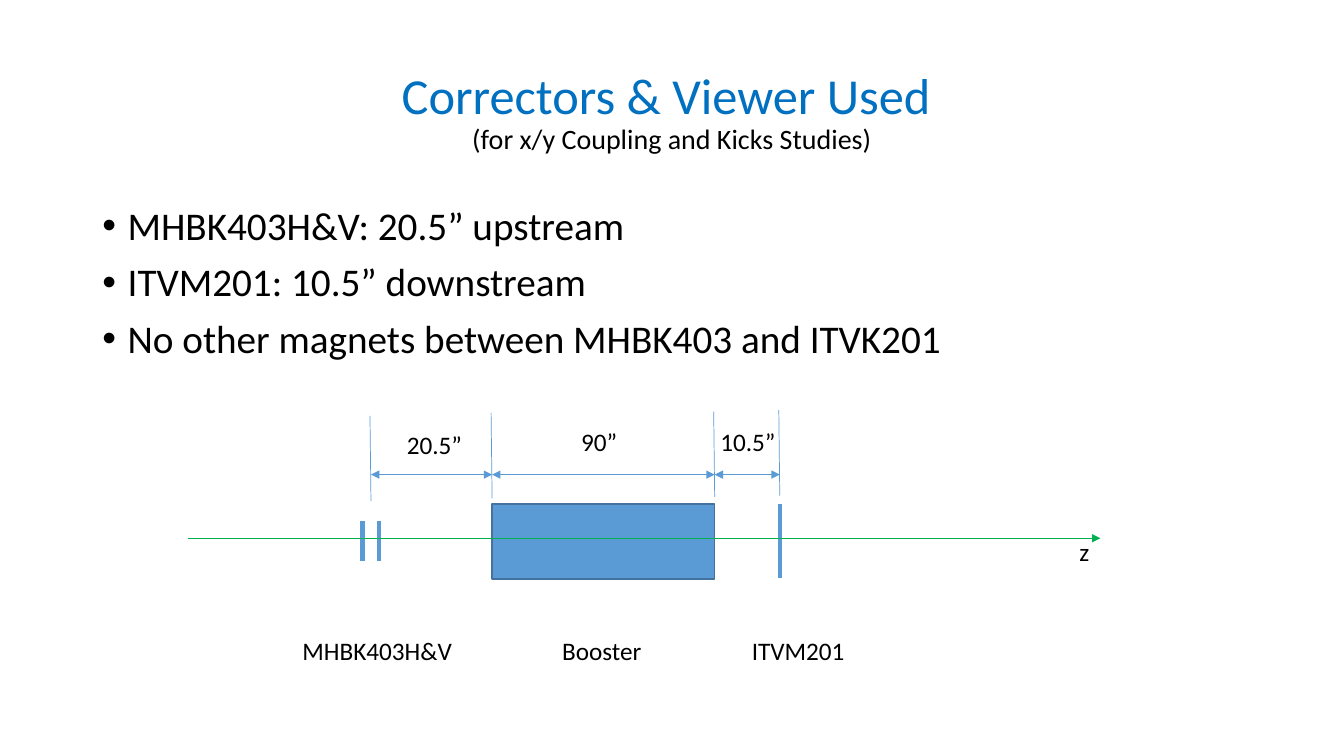
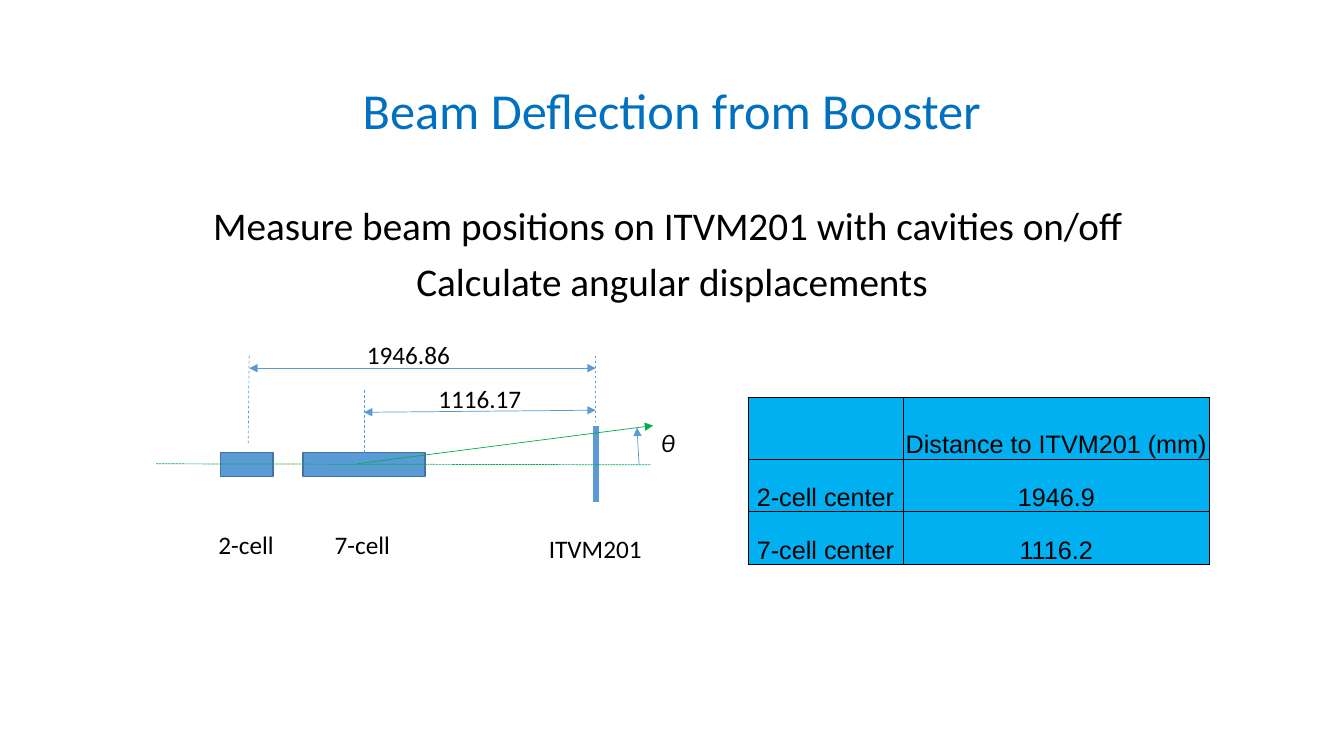
"""Build two slides on beam deflection in a booster cavity."""
from itertools import pairwise

from lxml import etree
from pptx import Presentation
from pptx.dml.color import RGBColor
from pptx.enum import dml, shapes, text
from pptx.oxml import ns
from pptx.util import Pt

TITLE_BLUE = RGBColor(0x00, 0x70, 0xC0)
BLACK = RGBColor(0x00, 0x00, 0x00)
DEVICE_BLUE = RGBColor(0x5B, 0x9B, 0xD5)
DEVICE_EDGE = RGBColor(0x43, 0x73, 0x9E)
BEAM_GREEN = RGBColor(0x00, 0xB0, 0x50)
TABLE_BLUE = RGBColor(0x00, 0xB0, 0xF0)
FONT = "Calibri"
MARGIN, CONTENT_WIDTH = 66, 828
DASH = dml.MSO_LINE.DASH
FINE_DASH = dml.MSO_LINE.SQUARE_DOT


def add_span(para, words, size=18, color=BLACK, name=FONT, italic=None):
    """Add one formatted run to a paragraph."""
    span = para.add_run()
    span.text = words
    span.font.size = Pt(size)
    span.font.name = name
    span.font.color.rgb = color
    span.font.italic = italic


def place(shape, left, top, width, height):
    """Move and size a shape."""
    shape.left, shape.top = Pt(left), Pt(top)
    shape.width, shape.height = Pt(width), Pt(height)


def fill_title(page, title, subtitle=None):
    """Write the centred title with an optional smaller second line."""
    box = page.shapes.title
    place(box, MARGIN, 28.8, CONTENT_WIDTH, 104.4)
    box.text_frame.vertical_anchor = text.MSO_ANCHOR.MIDDLE
    para = box.text_frame.paragraphs[0]
    para.alignment = text.PP_ALIGN.CENTER
    para.line_spacing = 0.9
    add_span(para, title, 36, TITLE_BLUE)
    if subtitle:
        para.add_line_break()
        add_span(para, subtitle, 20)


def fill_body(page, lines, bulleted):
    """Write the body lines, as a bulleted list or centred."""
    box = page.placeholders[1]
    place(box, MARGIN, 144, CONTENT_WIDTH, 342.72)
    frame = box.text_frame
    for index, line in enumerate(lines):
        para = frame.add_paragraph() if index else frame.paragraphs[0]
        properties = para._p.get_or_add_pPr()
        indent = Pt(18) if bulleted else 0
        properties.set("marL", str(indent))
        properties.set("indent", str(-indent))
        if bulleted:
            etree.SubElement(properties, ns.qn("a:buChar"), char="•")
        else:
            etree.SubElement(properties, ns.qn("a:buNone"))
            para.alignment = text.PP_ALIGN.CENTER
        para.line_spacing = 0.9
        para.space_before = Pt(10 if index else 0)
        add_span(para, line, 28)


class Diagram:
    """A drawing area whose parts are placed from its top left corner."""

    def __init__(self, page, left, top):
        """Remember the slide and the corner."""
        self.shapes, self.left, self.top = page.shapes, left, top

    def at(self, x, y):
        """Turn a point of the diagram into slide lengths."""
        return Pt(self.left + x), Pt(self.top + y)

    def line(self, start, end, color=DEVICE_BLUE, width=0.5, dash=None, heads=()):
        """Draw a straight line with optional dashes and arrowheads."""
        line = self.shapes.add_connector(
            shapes.MSO_CONNECTOR.STRAIGHT, *self.at(*start), *self.at(*end))
        line.line.color.rgb = color
        line.line.width = Pt(width)
        if dash:
            line.line.dash_style = dash
        outline = line._element.spPr.find(ns.qn("a:ln"))
        for head in heads:
            etree.SubElement(outline, ns.qn(f"a:{head}"), type="triangle")
        etree.SubElement(line._element.spPr, ns.qn("a:effectLst"))
        return line

    def dimension(self, start, end):
        """Draw a double-headed dimension line."""
        self.line(start, end, heads=("headEnd", "tailEnd"))

    def device(self, left, top, width, height):
        """Draw a beamline device as a rectangle."""
        box = self.shapes.add_shape(
            shapes.MSO_SHAPE.RECTANGLE, *self.at(left, top), Pt(width), Pt(height))
        box.shadow.inherit = False
        box.fill.solid()
        box.fill.fore_color.rgb = DEVICE_BLUE
        box.line.color.rgb = DEVICE_EDGE
        box.line.width = Pt(1)
        return box

    def label(self, words, left, top, width, italic=None):
        """Write a one-line label."""
        box = self.shapes.add_textbox(*self.at(left, top), Pt(width), Pt(29))
        box.text_frame.word_wrap = False
        add_span(box.text_frame.paragraphs[0], words, italic=italic)


def draw_beamline(page, left, top):
    """Draw the correctors, booster and viewer along the z axis."""
    diagram = Diagram(page, left, top)
    stations = corrector, entry, leave, viewer = 131, 217.5, 376.5, 423
    diagram.device(entry, 67, leave - entry, 53.5)
    diagram.line((viewer, 67), (viewer, 120), width=3)
    for side in (-6, 5.5):
        diagram.line((corrector + side, 79), (corrector + side, 108), width=3)
    diagram.line((0, 91.5), (652, 91.5), BEAM_GREEN, heads=("tailEnd",))
    for x, y in zip(stations, (4, 2, 1, 0)):
        diagram.line((x, y + 61), (x - 0.7, y))
    for start, end in pairwise(stations):
        diagram.dimension((start, 46), (end, 46))
    for label in (("20.5”", 149.5, 10, 54), ("90”", 274, 8, 40),
                  ("10.5”", 373.5, 8, 54), ("MHBK403H&V", 75, 157, 122),
                  ("Booster", 260.5, 157, 72), ("ITVM201", 396, 157, 81),
                  ("z", 630, 86.5, 22)):
        diagram.label(*label)


def draw_deflection(page, left, top):
    """Draw the deflected beam between the two cavities and the viewer."""
    diagram = Diagram(page, left, top)
    two_cell, seven_cell, viewer = 66.5, 148.5, 314
    diagram.device(46, 84.3, 37.5, 17.3)
    seven_box = diagram.device(105, 84.3, 87, 17.3)
    diagram.line((viewer, 65.5), (viewer, 119.5), width=4.5)
    diagram.line((0, 92.3), (353.5, 93), BEAM_GREEN, dash=FINE_DASH)
    diagram.line((143.5, 92.3), (355, 65), BEAM_GREEN, heads=("tailEnd",))
    diagram.line((345, 93), (343.5, 66.5), heads=("tailEnd",))
    diagram.line((viewer, 15), (viewer, 62.5), dash=DASH)
    diagram.line((two_cell, 15), (two_cell - 0.7, 78), dash=DASH)
    drop = diagram.line((seven_cell, 39.5), (seven_cell, 84.3), dash=DASH)
    drop.end_connect(seven_box, 0)
    diagram.dimension((two_cell, 24), (viewer, 24))
    diagram.dimension((seven_cell, 55.5), (viewer, 54))
    for label in (("1946.86", 143.5, 0, 74), ("1116.17", 194.5, 31.5, 74),
                  ("2-cell", 37.5, 135.5, 55), ("7-cell", 120.5, 135.5, 55),
                  ("ITVM201", 273.5, 138.5, 81), ("θ", 353.5, 62.5, 24, True)):
        diagram.label(*label)


def fill_cell(cell, words):
    """Format one table cell and write its words."""
    properties = cell._tc.get_or_add_tcPr()
    for side in "LRTB":
        border = etree.SubElement(properties, ns.qn(f"a:ln{side}"), w=str(Pt(0.5)))
        paint = etree.SubElement(border, ns.qn("a:solidFill"))
        etree.SubElement(paint, ns.qn("a:srgbClr"), val=str(BLACK))
    cell.fill.solid()
    cell.fill.fore_color.rgb = TABLE_BLUE
    cell.margin_left = cell.margin_right = cell.margin_top = Pt(0.72)
    cell.margin_bottom = 0
    cell.vertical_anchor = text.MSO_ANCHOR.BOTTOM
    if words:
        para = cell.text_frame.paragraphs[0]
        para.alignment = text.PP_ALIGN.CENTER
        add_span(para, words, name="Arial")


def add_distances(page, left, top):
    """Add the table of distances to the viewer."""
    rows = (("", "Distance to ITVM201 (mm)"),
            ("2-cell center", "1946.9"),
            ("7-cell center", "1116.2"))
    widths, heights = (110.7, 219), (44.2, 37.5, 37.8)
    table = page.shapes.add_table(
        len(rows), len(widths), Pt(left), Pt(top),
        Pt(sum(widths)), Pt(sum(heights))).table
    table.first_row = table.horz_banding = False
    for column, width in zip(table.columns, widths):
        column.width = Pt(width)
    for row, height, entries in zip(table.rows, heights, rows):
        row.height = Pt(height)
        for cell, words in zip(row.cells, entries):
            fill_cell(cell, words)


def build_correctors(page):
    """Build the slide on correctors and viewer."""
    fill_title(page, "Correctors & Viewer Used ",
               "(for x/y Coupling and Kicks Studies)")
    fill_body(page, ("MHBK403H&V: 20.5” upstream",
                     "ITVM201: 10.5” downstream",
                     "No other magnets between MHBK403 and ITVK201"), True)
    draw_beamline(page, 134, 293)


def build_deflection(page):
    """Build the slide on beam deflection."""
    fill_title(page, "Beam Deflection from Booster")
    fill_body(page, ("Measure beam positions on ITVM201 with cavities on/off ",
                     "Calculate angular displacements"), False)
    draw_deflection(page, 111.5, 239)
    add_distances(page, 534.3, 283.7)


def main():
    """Build and save the deck."""
    deck = Presentation()
    deck.slide_width, deck.slide_height = Pt(960), Pt(540)
    for build in (build_correctors, build_deflection):
        build(deck.slides.add_slide(deck.slide_layouts[1]))
    deck.save("out.pptx")


if __name__ == "__main__":
    main()
